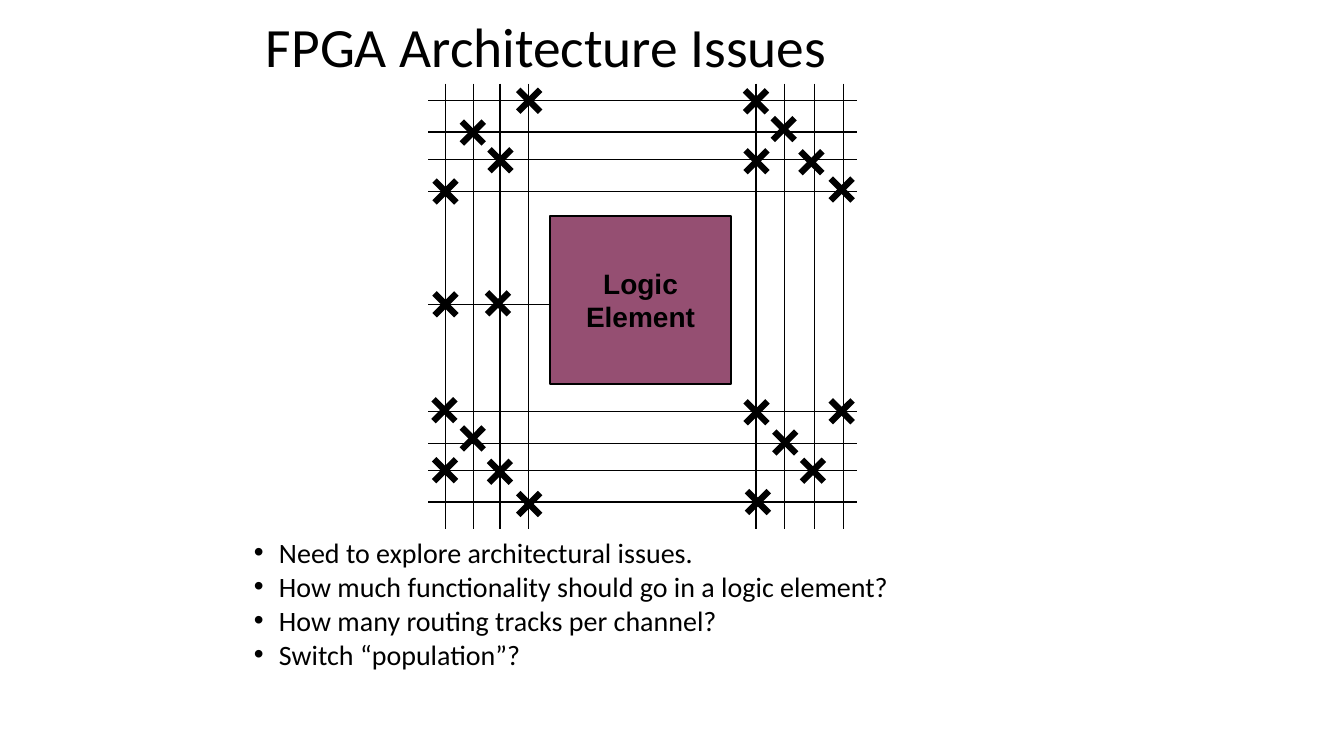
from dataclasses import dataclass

from lxml.etree import SubElement
from pptx import Presentation
from pptx.dml.color import RGBColor
from pptx.enum.shapes import MSO_CONNECTOR, MSO_SHAPE
from pptx.enum.text import MSO_ANCHOR, PP_ALIGN
from pptx.oxml.ns import qn
from pptx.slide import Slide
from pptx.text.text import TextFrame
from pptx.util import Pt


@dataclass(frozen=True)
class Theme:
    """Colours, fonts, type sizes and line weights."""
    ink: RGBColor = RGBColor(0x00, 0x00, 0x00)
    paper: RGBColor = RGBColor(0xFF, 0xFF, 0xFF)
    element: RGBColor = RGBColor(0x95, 0x4F, 0x72)
    text_font: str = "Calibri"
    label_font: str = "Arial"
    title_size: float = 39.6
    body_size: float = 20
    track_weight: float = 1
    border_weight: float = 1.5
    switch_weight: float = 4.5


@dataclass(frozen=True)
class Area:
    """A rectangle in points."""
    left: float
    top: float
    width: float
    height: float


@dataclass(frozen=True)
class Segment:
    """A straight line in points."""
    x1: float
    y1: float
    x2: float
    y2: float


@dataclass(frozen=True)
class Switch:
    """The centre of a routing switch in points."""
    x: float
    y: float


THEME = Theme()
TITLE_AREA = Area(182.9, 23.8, 483.1, 23.8)
BULLET_AREA = Area(138.2, 383.8, 653.8, 144)
ELEMENT_AREA = Area(393.1, 154.1, 128.9, 120.2)
GRID = Area(306, 59.8, 306, 318.2)
COLUMNS = (318.2, 338.4, 357.1, 377.3, 540, 560.2, 581.8, 602.6)
ROWS = (72, 94.3, 113.8, 136.8, 293.8, 316.8, 336.2, 358.6)
PIN_WIRES = (Segment(378, 217.4, 306, 217.4), Segment(373, 217.4, 393.1, 217.4))
SWITCH_REACH = 7.8
SWITCHES = (
    Switch(355.7, 216.7), Switch(318.2, 217.4),
    Switch(337.7, 94.7), Switch(357.5, 114.5), Switch(318.2, 136.8), Switch(378, 72),
    Switch(378, 360), Switch(317.5, 293), Switch(337.7, 313.2),
    Switch(357.1, 337), Switch(317.9, 335.9),
    Switch(601.2, 135.4), Switch(540, 72.4), Switch(559.8, 92.2),
    Switch(579.6, 115.9), Switch(540.4, 115.2),
    Switch(560.9, 316.1), Switch(580.7, 336.2), Switch(541.4, 358.6),
    Switch(601.2, 293.8), Switch(540.4, 294.5),
)
BULLETS = (
    "Need to explore architectural issues.",
    "How much functionality should go in a logic element?",
    "How many routing tracks per channel?",
    "Switch “population”?",
)


def write_lines(frame: TextFrame, lines: tuple[str, ...], font: str, size: float,
                bold: bool = False) -> None:
    """Write each line as one paragraph."""
    for index, line in enumerate(lines):
        para = frame.paragraphs[0] if index == 0 else frame.add_paragraph()
        span = para.add_run()
        span.text = line
        span.font.name = font
        span.font.size = Pt(size)
        span.font.bold = bold
        span.font.color.rgb = THEME.ink


def add_text_box(page: Slide, area: Area) -> TextFrame:
    """Add a wrapping text box and return its frame."""
    box = page.shapes.add_textbox(Pt(area.left), Pt(area.top), Pt(area.width), Pt(area.height))
    box.text_frame.word_wrap = True
    return box.text_frame


def add_title(page: Slide) -> None:
    """Add the slide title."""
    frame = add_text_box(page, TITLE_AREA)
    frame.vertical_anchor = MSO_ANCHOR.MIDDLE
    write_lines(frame, ("FPGA Architecture Issues",), THEME.text_font, THEME.title_size)
    frame.paragraphs[0].line_spacing = 0.9


def add_bullets(page: Slide) -> None:
    """Add the bulleted questions."""
    frame = add_text_box(page, BULLET_AREA)
    write_lines(frame, BULLETS, THEME.text_font, THEME.body_size)
    for para in frame.paragraphs:
        para.line_spacing = 0.8
        para.space_before = Pt(5)
        properties = para._p.get_or_add_pPr()
        properties.set("marL", str(Pt(54)))
        properties.set("indent", str(Pt(-18)))
        SubElement(properties, qn("a:buFont"), typeface=THEME.label_font)
        SubElement(properties, qn("a:buChar"), char="•")


def add_logic_element(page: Slide) -> None:
    """Add the labelled logic element."""
    area = ELEMENT_AREA
    box = page.shapes.add_shape(MSO_SHAPE.RECTANGLE, Pt(area.left), Pt(area.top),
                                Pt(area.width), Pt(area.height))
    box.shadow.inherit = False
    box.fill.solid()
    box.fill.fore_color.rgb = THEME.element
    box.line.color.rgb = THEME.ink
    box.line.width = Pt(THEME.border_weight)
    frame = box.text_frame
    frame.word_wrap = False
    frame.vertical_anchor = MSO_ANCHOR.MIDDLE
    write_lines(frame, ("Logic", "Element"), THEME.label_font, THEME.body_size, bold=True)
    for para in frame.paragraphs:
        para.alignment = PP_ALIGN.CENTER


def add_line(page: Slide, segment: Segment, weight: float) -> None:
    """Add a straight line without a shadow."""
    line = page.shapes.add_connector(MSO_CONNECTOR.STRAIGHT, Pt(segment.x1), Pt(segment.y1),
                                     Pt(segment.x2), Pt(segment.y2))
    line.line.color.rgb = THEME.ink
    line.line.width = Pt(weight)
    SubElement(line._element.spPr, qn("a:effectLst"))


def add_tracks(page: Slide) -> None:
    """Add the routing tracks and the pin wires."""
    right, bottom = GRID.left + GRID.width, GRID.top + GRID.height
    columns = tuple(Segment(x, GRID.top, x, bottom) for x in COLUMNS)
    rows = tuple(Segment(GRID.left, y, right, y) for y in ROWS)
    for segment in columns + PIN_WIRES + rows:
        add_line(page, segment, THEME.track_weight)


def add_switch(page: Slide, switch: Switch) -> None:
    """Add a switch as two crossed strokes."""
    for rise in (SWITCH_REACH, -SWITCH_REACH):
        stroke = Segment(switch.x - SWITCH_REACH, switch.y - rise,
                         switch.x + SWITCH_REACH, switch.y + rise)
        add_line(page, stroke, THEME.switch_weight)


def main() -> None:
    """Build and save the deck."""
    deck = Presentation()
    deck.slide_width, deck.slide_height = Pt(960), Pt(540)
    page = deck.slides.add_slide(deck.slide_layouts[6])
    page.background.fill.solid()
    page.background.fill.fore_color.rgb = THEME.paper
    add_title(page)
    add_bullets(page)
    add_logic_element(page)
    add_tracks(page)
    for switch in SWITCHES:
        add_switch(page, switch)
    deck.save("out.pptx")


if __name__ == "__main__":
    main()
